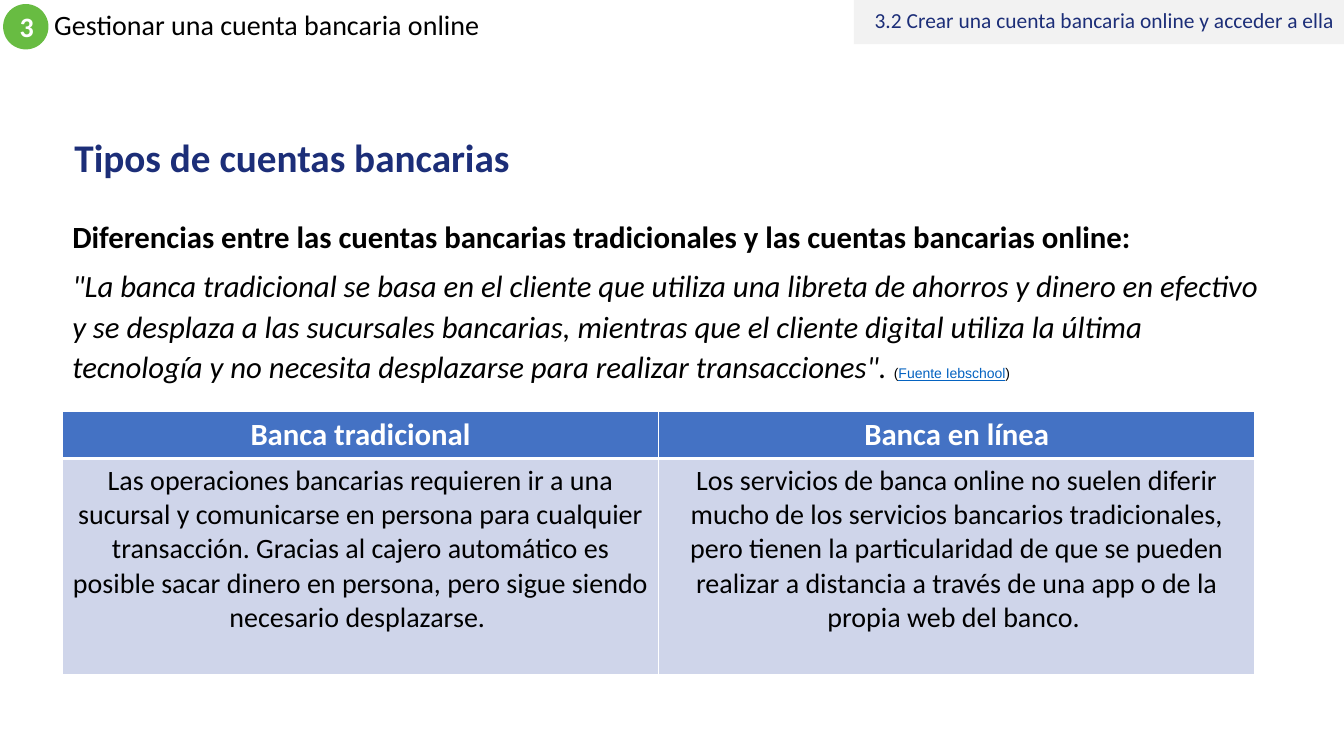
from dataclasses import dataclass

from lxml import etree
from pptx import Presentation
from pptx.dml.color import RGBColor
from pptx.enum.shapes import MSO_SHAPE
from pptx.enum.text import MSO_ANCHOR, PP_ALIGN
from pptx.oxml.ns import qn
from pptx.util import Pt

LEFT, CENTER, RIGHT = PP_ALIGN.LEFT, PP_ALIGN.CENTER, PP_ALIGN.RIGHT
TOP, MIDDLE = MSO_ANCHOR.TOP, MSO_ANCHOR.MIDDLE
OVAL, RECTANGLE = MSO_SHAPE.OVAL, MSO_SHAPE.RECTANGLE


@dataclass(frozen=True)
class Theme:
    font: str = "Calibri"
    source_font: str = "Arial"
    ink: str = "000000"
    white: str = "FFFFFF"
    navy: str = "1C2E78"
    green: str = "68BC42"
    grey: str = "F2F2F2"
    link: str = "0563C1"
    header_fill: str = "4472C4"
    body_fill: str = "CFD5EA"
    title_size: float = 28
    lead_size: float = 22
    text_size: float = 20
    section_size: float = 15.3
    source_size: float = 10


class SlideBuilder:
    def __init__(self, slide, theme):
        self.slide = slide
        self.theme = theme

    def style(self, run, size, color, bold=False, italic=False, underline=False, font=None):
        run.font.name = font or self.theme.font
        run.font.size = Pt(size)
        run.font.color.rgb = RGBColor.from_string(color)
        run.font.bold = bold
        run.font.italic = italic
        run.font.underline = underline

    def set_text(self, frame, text, size, color, bold=False, align=LEFT, spacing=1.0, anchor=MIDDLE):
        frame.text = text
        frame.word_wrap = True
        frame.vertical_anchor = anchor
        paragraph = frame.paragraphs[0]
        paragraph.alignment = align
        paragraph.line_spacing = spacing
        self.style(paragraph.runs[0], size, color, bold)

    def text(self, box, text, size, color, **options):
        frame = self.slide.shapes.add_textbox(*map(Pt, box)).text_frame
        self.set_text(frame, text, size, color, **options)
        return frame

    def shape(self, kind, box, fill, text, size, color, **options):
        shape = self.slide.shapes.add_shape(kind, *map(Pt, box))
        shape.shadow.inherit = False
        shape.fill.solid()
        shape.fill.fore_color.rgb = RGBColor.from_string(fill)
        shape.line.fill.background()
        self.set_text(shape.text_frame, text, size, color, **options)

    def paragraph(self, frame, pieces, spacing, before, after):
        paragraph = frame.add_paragraph()
        paragraph.line_spacing = spacing
        paragraph.space_before = Pt(before)
        paragraph.space_after = Pt(after)
        for text, look in pieces:
            run = paragraph.add_run()
            run.text = text
            self.style(run, **look)

    def border(self, cell, widths):
        properties = cell._tc.get_or_add_tcPr()
        for position, (side, width) in enumerate(widths.items()):
            line = etree.Element(qn(f"a:ln{side}"), w=str(Pt(width)))
            fill = etree.SubElement(line, qn("a:solidFill"))
            etree.SubElement(fill, qn("a:srgbClr"), val=self.theme.white)
            properties.insert(position, line)

    def table(self, box, row_heights, rows, row_styles):
        columns = len(rows[0])
        table = self.slide.shapes.add_table(len(rows), columns, *map(Pt, box)).table
        for column in table.columns:
            column.width = Pt(box[2] / columns)
        for row, height, texts, style in zip(table.rows, row_heights, rows, row_styles):
            row.height = Pt(height)
            fill, size, color, bold, widths = style
            for cell, text in zip(row.cells, texts):
                self.set_text(cell.text_frame, text, size, color, bold, CENTER)
                cell.vertical_anchor = TOP
                cell.fill.solid()
                cell.fill.fore_color.rgb = RGBColor.from_string(fill)
                self.border(cell, widths)


def main():
    theme = Theme()
    presentation = Presentation()
    presentation.slide_width = Pt(960)
    presentation.slide_height = Pt(540)
    slide = presentation.slides.add_slide(presentation.slide_layouts[6])
    builder = SlideBuilder(slide, theme)

    builder.text((31.7, 2.9, 576, 32.4), "Gestionar una cuenta bancaria online",
                 theme.text_size, theme.ink, spacing=0.9)
    builder.shape(OVAL, (2.2, 2.9, 32.4, 32.4), theme.green, "3",
                  theme.text_size, theme.white, bold=True, align=CENTER)
    builder.text((46.1, 85, 871.2, 57.6), "Tipos de cuentas bancarias",
                 theme.title_size, theme.navy, bold=True, spacing=0.9)

    differences = builder.text(
        (44.6, 151.9, 871.2, 310.3),
        "Diferencias entre las cuentas bancarias tradicionales y las cuentas bancarias online:",
        theme.lead_size, theme.ink, bold=True, anchor=TOP)
    quote = {"size": theme.lead_size, "color": theme.ink, "italic": True}
    source = {"size": theme.source_size, "color": theme.ink, "font": theme.source_font}
    builder.paragraph(differences, [
        ('"La banca tradicional se basa en el cliente que utiliza una libreta de ahorros '
         "y dinero en efectivo y se desplaza a las sucursales bancarias, mientras que el "
         "cliente digital utiliza la última tecnología y no necesita desplazarse para "
         'realizar transacciones". ', quote),
        ("(", source),
        ("Fuente Iebschool", source | {"color": theme.link, "underline": True}),
        (")", source),
    ], spacing=1.1, before=6, after=6)

    header_borders = {"L": 1, "R": 1, "T": 1, "B": 3}
    body_borders = {"L": 1, "R": 1, "T": 3, "B": 1}
    builder.table(
        (44.6, 293.8, 851.8, 187.9), (33.8, 154.1),
        [("Banca tradicional", "Banca en línea"),
         ("Las operaciones bancarias requieren ir a una sucursal y comunicarse en persona "
          "para cualquier transacción. Gracias al cajero automático es posible sacar dinero "
          "en persona, pero sigue siendo necesario desplazarse. ",
          "Los servicios de banca online no suelen diferir mucho de los servicios bancarios "
          "tradicionales, pero tienen la particularidad de que se pueden realizar a distancia "
          "a través de una app o de la propia web del banco. ")],
        [(theme.header_fill, theme.lead_size, theme.white, True, header_borders),
         (theme.body_fill, theme.text_size, theme.ink, False, body_borders)])

    builder.shape(RECTANGLE, (610, 0, 350, 31.5), theme.grey,
                  "3.2 Crear una cuenta bancaria online y acceder a ella",
                  theme.section_size, theme.navy, align=RIGHT, spacing=0.8)

    presentation.save("out.pptx")


if __name__ == "__main__":
    main()
